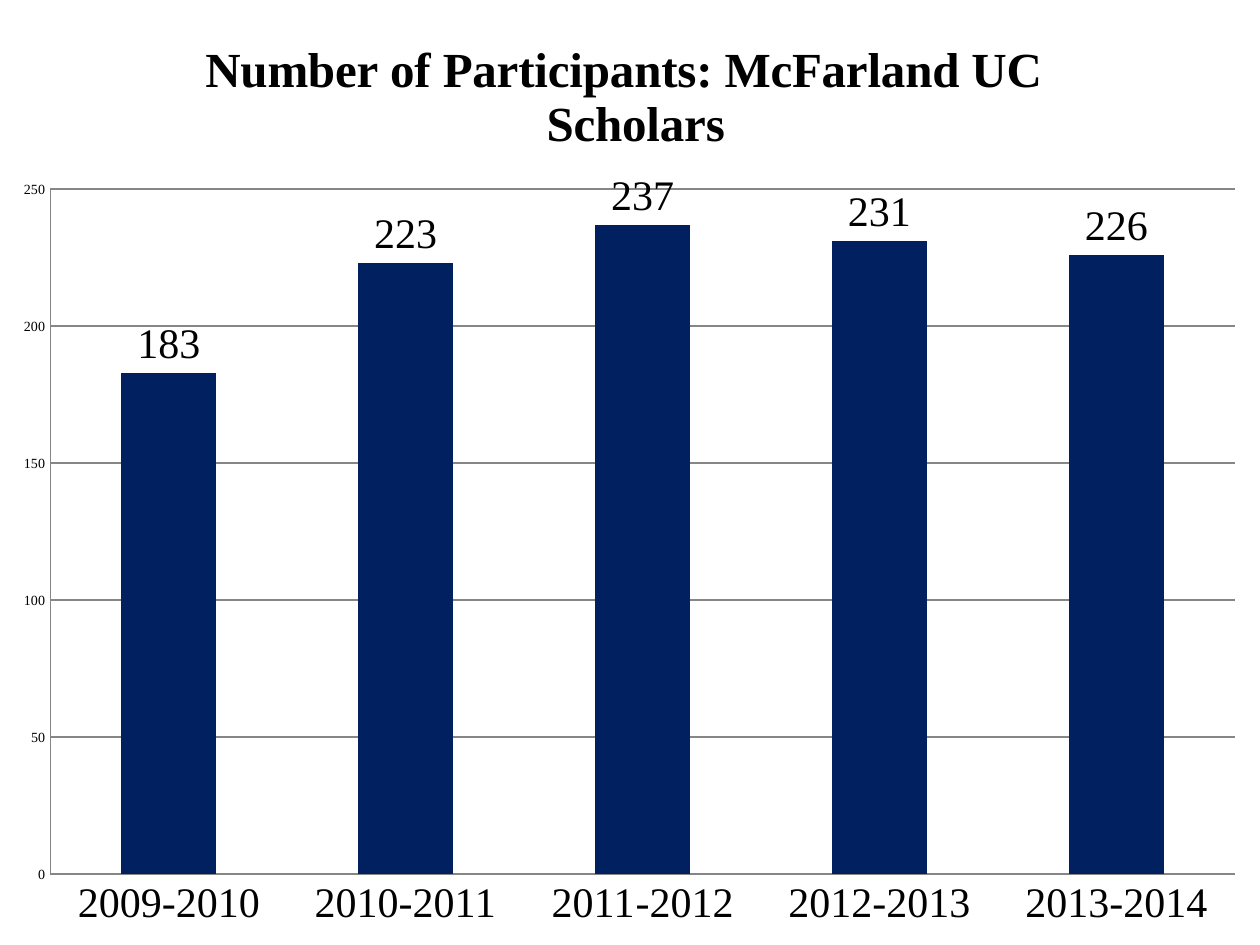
"""Build a slide with a column chart of yearly participants."""
from dataclasses import dataclass

from lxml import etree
from pptx import Presentation
from pptx.chart.data import CategoryChartData
from pptx.dml.color import RGBColor
from pptx.enum.chart import XL_CHART_TYPE as ChartType, XL_LABEL_POSITION as LabelPos
from pptx.enum.chart import XL_TICK_MARK as Tick
from pptx.oxml import parse_xml
from pptx.oxml.ns import nsdecls, qn
from pptx.util import Inches, Pt


@dataclass(frozen=True)
class Theme:
    font: str = "Times New Roman"
    text: RGBColor = RGBColor(0, 0, 0)
    bar: RGBColor = RGBColor(0x00, 0x20, 0x60)
    grid: RGBColor = RGBColor(0x86, 0x86, 0x86)
    title: Pt = Pt(28)
    label: Pt = Pt(24)
    scale: Pt = Pt(8)


def set_font(font, size, bold=False):
    font.name, font.size, font.bold = theme.font, size, bold
    font.color.rgb = theme.text


def make_layout(target="", **fractions):
    layout = parse_xml(f"<c:layout {nsdecls('c')}><c:manualLayout/></c:layout>")
    values = {"xMode": "edge", "yMode": "edge", **fractions}
    if target:
        values = {"layoutTarget": target, **values}
    for tag, value in values.items():
        etree.SubElement(layout[0], qn(f"c:{tag}")).set("val", str(value))
    return layout


theme = Theme()
prs = Presentation()
prs.slide_width, prs.slide_height = Inches(10), Inches(7.5)
s = prs.slides.add_slide(prs.slide_layouts[6])

data = CategoryChartData()
data.categories = [f"{year}-{year + 1}" for year in range(2009, 2014)]
data.add_series("Series 1", (183, 223, 237, 231, 226))
chart = s.shapes.add_chart(
    ChartType.COLUMN_CLUSTERED, 0, 0, prs.slide_width, prs.slide_height, data
).chart
chart.has_legend = False
set_font(chart.font, theme.label)

tf = chart.chart_title.text_frame
for i, line in enumerate(("Number of Participants: McFarland UC ", " Scholars")):
    p = tf.add_paragraph() if i else tf.paragraphs[0]
    r = p.add_run()
    r.text = line
    set_font(r.font, theme.title, bold=True)
chart.chart_title.include_in_layout = False

title = chart.chart_title._element
for old in title.findall(qn("c:layout")):
    title.remove(old)
title.find(qn("c:tx")).addnext(make_layout(x=0.16, y=0.04))
plot_area = title.getparent().find(qn("c:plotArea"))
for old in plot_area.findall(qn("c:layout")):
    plot_area.remove(old)
plot_area.insert(0, make_layout("inner", x=0.04, y=0.2, w=0.94, h=0.725))

for axis, size in ((chart.category_axis, theme.label), (chart.value_axis, theme.scale)):
    axis.major_tick_mark = axis.minor_tick_mark = Tick.NONE
    set_font(axis.tick_labels.font, size)
    axis.format.line.color.rgb = theme.grid
    axis.format.line.width = Pt(0.75)

scale = chart.value_axis
scale.minimum_scale, scale.maximum_scale, scale.major_unit = 0, 250, 50
scale.has_major_gridlines = True
scale.major_gridlines.format.line.color.rgb = theme.grid
scale.major_gridlines.format.line.width = Pt(0.75)

plot = chart.plots[0]
plot.gap_width = 150
plot.vary_by_categories = False
bars = plot.series[0]
bars.format.fill.solid()
bars.format.fill.fore_color.rgb = theme.bar
labels = bars.data_labels
labels.show_value = True
labels.position = LabelPos.OUTSIDE_END
set_font(labels.font, theme.label)

prs.save("out.pptx")
